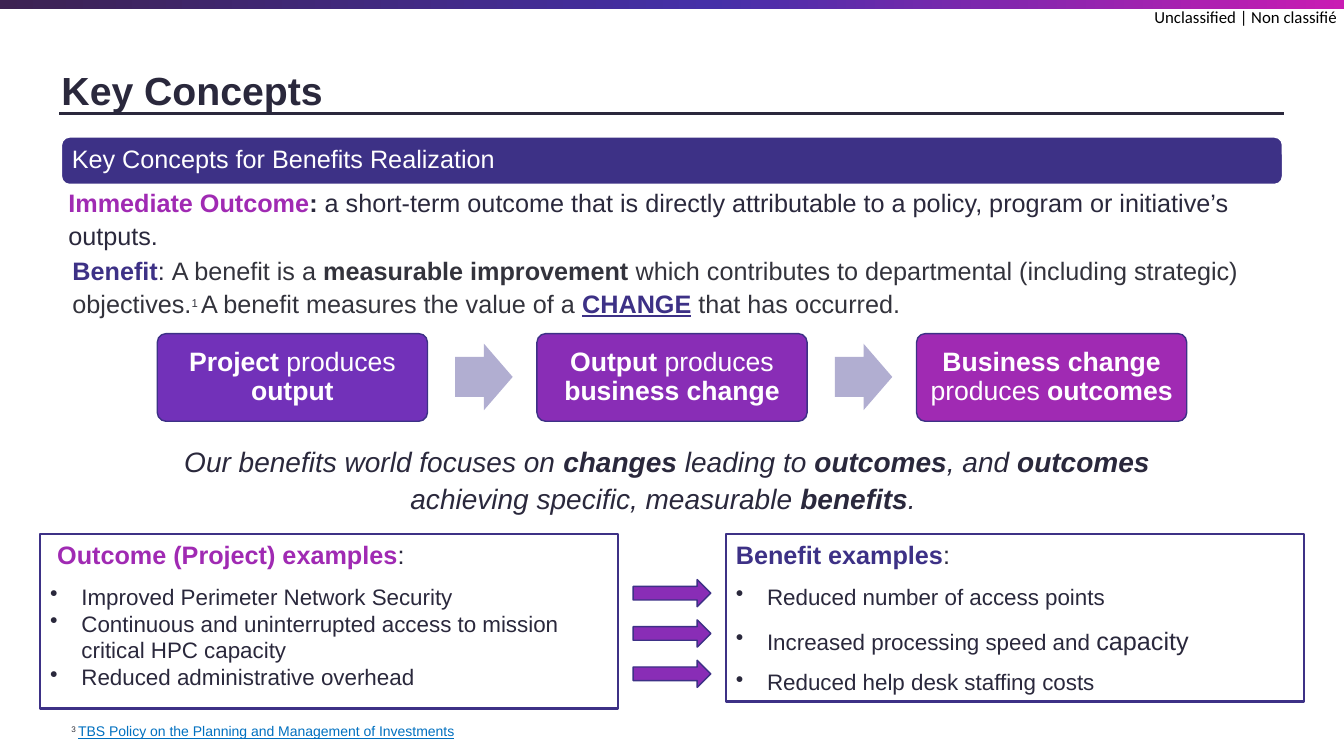
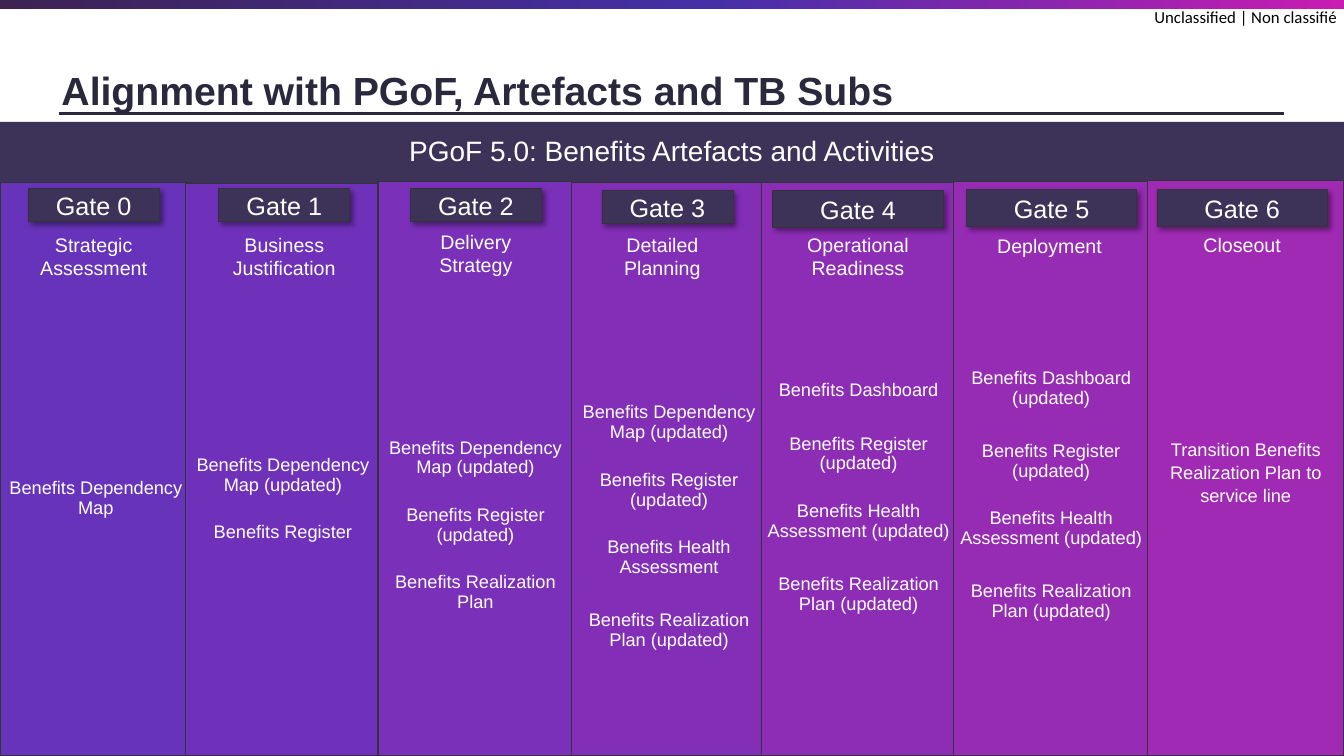
import pptx
import pptx.util
import pptx.dml.color
import pptx.enum.shapes
import pptx.enum.text
import pptx.oxml.ns
import lxml.etree

Inches = pptx.util.Inches
Pt = pptx.util.Pt
KIND = pptx.enum.shapes.MSO_SHAPE
ALIGN = pptx.enum.text.PP_ALIGN
MID = pptx.enum.text.MSO_ANCHOR.MIDDLE
TOP = pptx.enum.text.MSO_ANCHOR.TOP

HUE = {
    "ink": "2A283C", "gray": "33333C", "white": "FFFFFF", "black": "000000",
    "navy": "3D3186", "dark": "3D3358", "pink": "A02AB3", "plum": "892DB6",
    "grape": "7231B9", "pale": "B1AED1", "link": "0070C0",
    "left": "3D2252", "blue": "4530A8", "right": "C91CB3",
    "gate0": "6733BB", "gate1": "7031BA", "gate2": "7A30B8", "gate3": "832EB7",
    "gate4": "8D2DB6", "gate5": "962BB4", "gate6": "A02AB3",
}

DEP, REG, PLAN = "Benefits Dependency Map", "Benefits Register", "Benefits Realization Plan"
DASH, HEALTH, NEW = "Benefits Dashboard", "Benefits Health Assessment", " (updated)"

GATES = [
    ("Strategic Assessment", 0, 1.81, 1.9, (0.93, 2.26), (0.93, 1.87), 4.75, [(DEP, 0)]),
    ("Business Justification", 1.84, 1.82, 1.93, (2.82, 2.26), (2.82, 1.87), 4.52,
     [(DEP + NEW, 0), (REG, 20)]),
    ("Delivery Strategy", 3.75, 1.8, 1.93, (4.72, 2.23), (4.72, 1.87), 4.35,
     [(DEP + NEW, 0), (REG + NEW, 20), (PLAN, 20)]),
    ("Detailed Planning", 5.67, 1.81, 1.93, (6.57, 2.26), (6.62, 1.89), 4,
     [(DEP + NEW, 0), (REG + NEW, 20), (HEALTH, 20), (PLAN + NEW, 24)]),
    ("Operational Readiness", 7.55, 1.81, 1.93, (8.51, 2.26), (8.51, 1.89), 3.78,
     [(DASH, 0), (REG + NEW, 24), (HEALTH + NEW, 20), (PLAN + NEW, 24)]),
    ("Deployment", 9.46, 1.8, 1.93, (10.41, 2.27), (10.43, 1.88), 3.66,
     [(DASH + NEW, 0), (REG + NEW, 24), (HEALTH + NEW, 20), (PLAN + NEW, 24)]),
    ("Closeout", 11.38, 1.79, 1.95, (12.32, 2.26), (12.32, 1.88), 4.34,
     [("Transition Benefits Realization Plan to service line", 0)]),
]


def tint(name):
    return pptx.dml.color.RGBColor.from_string(HUE[name])


def node(parent, tag, **attrs):
    return lxml.etree.SubElement(parent, pptx.oxml.ns.qn(tag), **attrs)


def put(par, text, size=18, color="ink", bold=False, italic=False,
        under=False, sup=False, font="Arial"):
    for i, part in enumerate(text.split("*")):
        if not part:
            continue
        run = par.add_run()
        run.text = part
        face = run.font
        face.name, face.size, face.color.rgb = font, Pt(size), tint(color)
        face.bold, face.italic, face.underline = bold or i % 2 == 1, italic, under
        if sup:
            run._r.get_or_add_rPr().set("baseline", "30000")


def say(frame, *runs, align=ALIGN.LEFT, lead=1.0, before=0, bullet=False, **base):
    first = frame.paragraphs[0]
    par = frame.add_paragraph() if first.runs else first
    par.alignment, par.line_spacing, par.space_before = align, lead, Pt(before)
    if bullet:
        props = par._p.get_or_add_pPr()
        props.set("marL", str(Inches(0.31)))
        props.set("indent", str(Inches(-0.31)))
        node(props, "a:buChar", char="•")
    for run in runs:
        text, fmt = (run, {}) if isinstance(run, str) else run
        put(par, text, **{**base, **fmt})


def setup(frame, pad=(0.1, 0.05), anchor=TOP):
    frame.word_wrap = True
    frame.auto_size = pptx.enum.text.MSO_AUTO_SIZE.NONE
    frame.vertical_anchor = anchor
    frame.margin_left = frame.margin_right = Inches(pad[0])
    frame.margin_top = frame.margin_bottom = Inches(pad[1])
    return frame


def area(slide, x, y, w, h, pad=(0.1, 0.05)):
    box = slide.shapes.add_textbox(Inches(x), Inches(y), Inches(w), Inches(h))
    return setup(box.text_frame, pad)


def draw(slide, kind, x, y, w, h, fill=None, line=None, width=1, adj=()):
    shape = slide.shapes.add_shape(kind, Inches(x), Inches(y), Inches(w), Inches(h))
    shape.shadow.inherit = False
    for i, value in enumerate(adj):
        shape.adjustments[i] = value
    if fill:
        shape.fill.solid()
        shape.fill.fore_color.rgb = tint(fill)
    else:
        shape.fill.background()
    if line:
        shape.line.color.rgb = tint(line)
        shape.line.width = Pt(width)
    else:
        shape.line.fill.background()
    return shape


def blend(shape, stops):
    shape.fill.gradient()
    shape.fill.gradient_angle = 0
    chain = shape._element.spPr.find(".//" + pptx.oxml.ns.qn("a:gsLst"))
    for old in list(chain):
        chain.remove(old)
    for pos, name in stops:
        node(node(chain, "a:gs", pos=str(pos * 1000)), "a:srgbClr", val=HUE[name])


def shade(shape):
    effect = shape._element.spPr.find(pptx.oxml.ns.qn("a:effectLst"))
    outer = node(effect, "a:outerShdw", blurRad=str(Pt(4)), dist=str(Pt(3)),
                 dir="2700000", algn="tl", rotWithShape="0")
    node(node(outer, "a:srgbClr", val=HUE["black"]), "a:alpha", val="40000")


def start(deck, title, width):
    slide = deck.slides.add_slide(deck.slide_layouts[5])
    blend(draw(slide, KIND.RECTANGLE, 0, 0, 13.33, 0.09), [(0, "left"), (53, "blue"), (100, "right")])
    say(area(slide, 11.45, 0.07, 1.86, 0.2, (0, 0)), "Unclassified | Non classifié",
        size=12, color="black", font="Calibri")
    rule = slide.shapes.add_connector(pptx.enum.shapes.MSO_CONNECTOR.STRAIGHT,
                                      Inches(0.59), Inches(1.13), Inches(12.74), Inches(1.13))
    rule.line.color.rgb = tint("ink")
    rule.line.width = Pt(2.25)
    node(rule._element.spPr, "a:effectLst")
    head = slide.shapes.title
    head.left, head.top, head.width, head.height = map(Inches, (0.61, 0.57, width, 0.55))
    say(setup(head.text_frame, (0, 0), MID), title, size=28, bold=True, lead=1.2)
    return slide


def flow(slide):
    steps = [("*Project* produces *output*", "grape"),
             ("*Output* produces *business change*", "plum"),
             ("*Business change* produces *outcomes*", "pink")]
    for i, (text, fill) in enumerate(steps):
        x = 1.56 + 3.765 * i
        if i:
            draw(slide, KIND.RIGHT_ARROW, x - 0.81, 3.41, 0.57, 0.66, "pale", adj=(0.6, 0.5))
        step = draw(slide, KIND.ROUNDED_RECTANGLE, x, 3.31, 2.68, 0.87, fill, "navy", adj=(0.1,))
        say(setup(step.text_frame, (0.08, 0.08), MID), text,
            align=ALIGN.CENTER, lead=0.9, size=19, color="white")


def panel(slide, x, h, head, color, items):
    frame = setup(draw(slide, KIND.RECTANGLE, x, 5.3, 5.73, h, line="navy", width=1.5).text_frame)
    say(frame, (head, {"bold": True, "color": color}), ":")
    for lead, *runs in items:
        say(frame, *runs, lead=lead, bullet=True, size=16)


def concepts(deck):
    slide = start(deck, "Key Concepts", 5.76)
    say(area(slide, 0.58, 1.78, 12.11, 0.74),
        ("Immediate Outcome", {"color": "pink", "bold": True}),
        "*: *a short-term outcome that is directly attributable to a policy, program or "
        "initiative’s outputs.", lead=1.1)
    say(area(slide, 0.61, 7.12, 4.44, 0.27), ("3 ", {"sup": True}),
        ("TBS Policy on the Planning and Management of Investments",
         {"color": "link", "under": True}), size=10, color="gray")
    bar = draw(slide, KIND.ROUNDED_RECTANGLE, 0.61, 1.36, 12.11, 0.47, "navy", "white")
    say(setup(bar.text_frame, (0.08, 0.05), MID), "Key Concepts for Benefits Realization",
        color="white", lead=0.9)
    flow(slide)
    say(area(slide, 1.19, 4.33, 10.85, 0.81),
        "Our benefits world focuses on *changes* leading to *outcomes*, and *outcomes* "
        "achieving specific, measurable *benefits*. ",
        align=ALIGN.CENTER, lead=1.1, size=20, italic=True)
    panel(slide, 0.4, 1.73, " Outcome (Project) examples", "pink", [
        (1.5, "Improved Perimeter Network Security"),
        (1.0, "Continuous and uninterrupted access to mission critical HPC capacity"),
        (1.0, "Reduced administrative overhead")])
    panel(slide, 7.2, 1.66, "Benefit examples", "navy", [
        (1.5, "Reduced number of access points"),
        (1.5, "Increased processing speed and ", ("capacity", {"size": 18})),
        (1.5, "Reduced help desk staffing costs")])
    say(area(slide, 0.62, 2.45, 12.31, 0.74),
        ("Benefit", {"color": "navy", "bold": True}), (": ", {"color": "ink"}),
        "A benefit is a *measurable improvement *which contributes to departmental "
        "(including strategic) objectives.",
        ("1 ", {"size": 14, "sup": True}), "A benefit measures the value of a ",
        ("CHANGE", {"color": "navy", "bold": True, "under": True}),
        " that has occurred.", lead=1.1, color="gray")
    for i in range(3):
        draw(slide, KIND.RIGHT_ARROW, 6.28, 5.75 + 0.4 * i, 0.77, 0.27, "plum", "navy")


def gates(deck):
    slide = start(deck, "Alignment with PGoF, Artefacts and TB Subs", 9.49)
    band = draw(slide, KIND.RECTANGLE, 0, 1.21, 13.33, 0.61, "dark")
    say(setup(band.text_frame, (0.08, 0.08), MID), "PGoF 5.0: Benefits Artefacts and Activities",
        align=ALIGN.CENTER, lead=0.9, size=20, color="white")
    for i, (stage, x, y, w, name, tag, body, items) in enumerate(GATES):
        lane = draw(slide, KIND.RECTANGLE, x, y, w, 7.5 - y, f"gate{i}", "gray")
        frame = setup(lane.text_frame, (0.05, 0.05))
        frame.margin_top = Inches(body - y)
        for text, gap in items:
            say(frame, text, align=ALIGN.CENTER, lead=1.05 if i == 6 else 0.9,
                before=gap, size=13, color="white")
        say(area(slide, name[0] - 0.7, name[1], 1.4, 0.57), stage,
            align=ALIGN.CENTER, size=14, color="white")
        wide, tall = (1.3, 0.33) if i < 4 else (1.69, 0.37)
        plate = draw(slide, KIND.RECTANGLE, tag[0] - wide / 2, tag[1], wide, tall,
                     "dark", "gray", 0.5)
        shade(plate)
        say(setup(plate.text_frame, anchor=MID), f"Gate {i}", align=ALIGN.CENTER, color="white")


def main():
    deck = pptx.Presentation()
    deck.slide_width, deck.slide_height = Inches(13.33), Inches(7.5)
    concepts(deck)
    gates(deck)
    deck.save("out.pptx")


if __name__ == "__main__":
    main()
